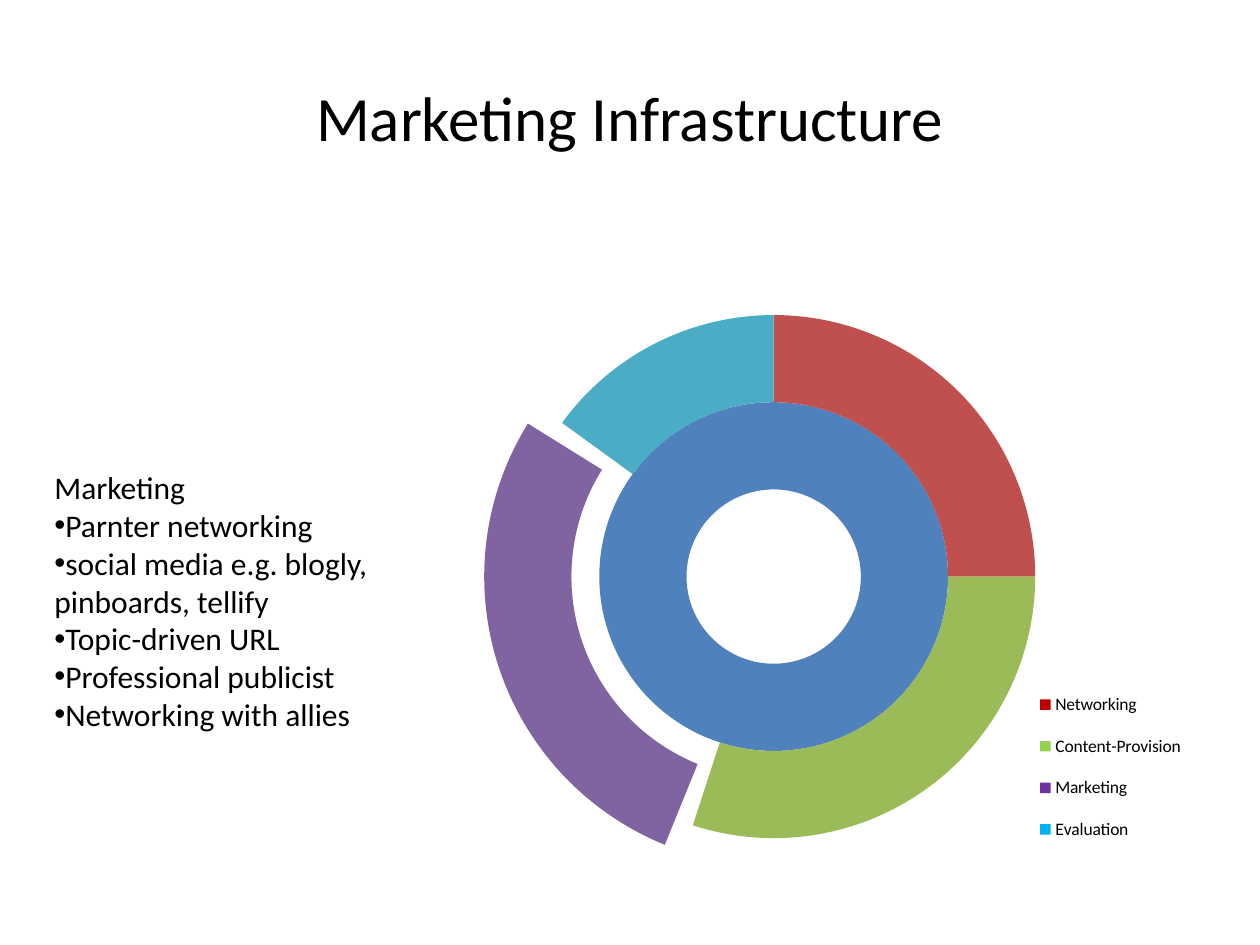
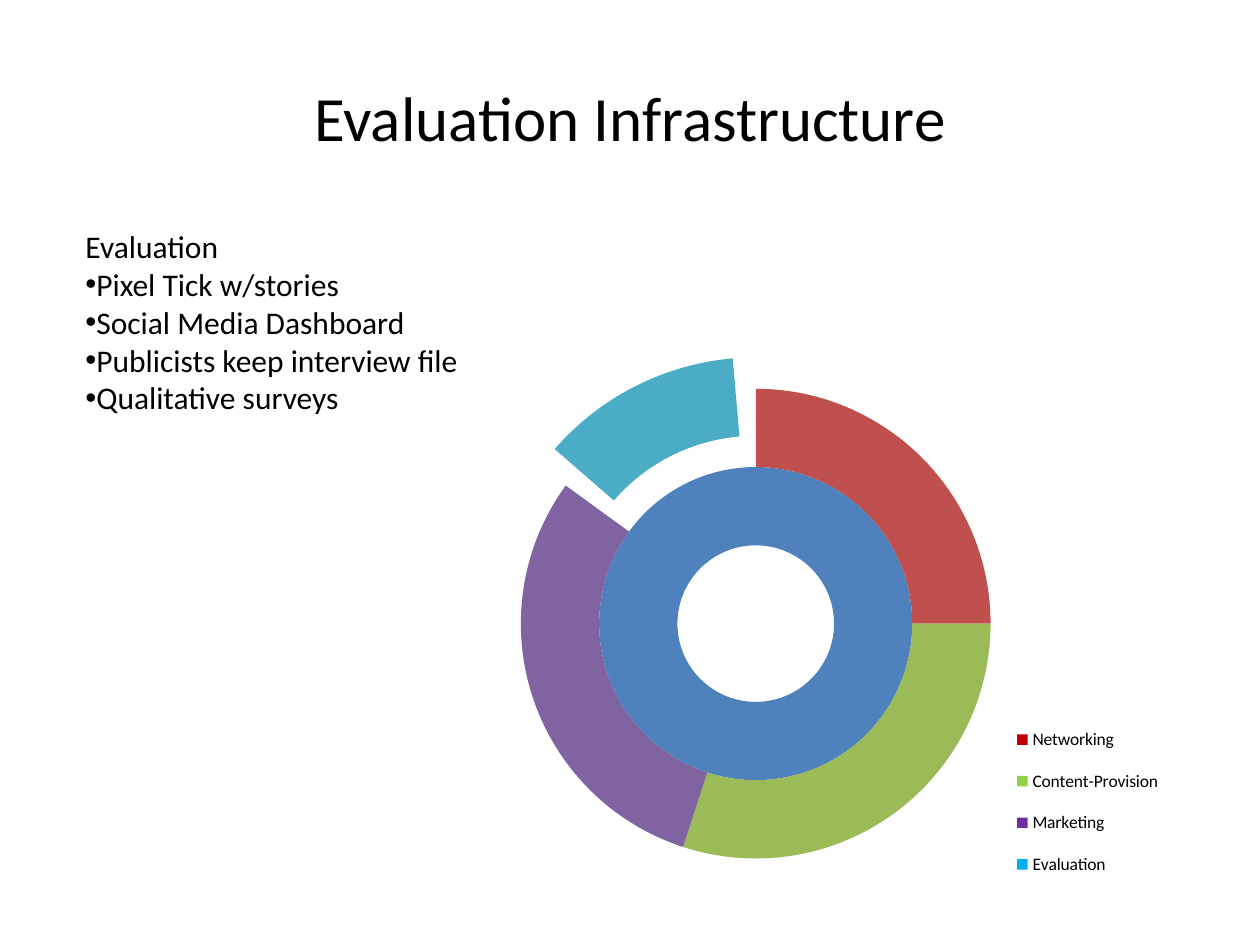
"""Build two infrastructure slides, each a title, a bulleted list and a two-ring doughnut chart."""
import dataclasses
import typing

import lxml.etree
import pptx
import pptx.chart.data
import pptx.dml.color
import pptx.enum.chart
import pptx.enum.text
import pptx.oxml.ns
import pptx.util

EMU_PER_PX = 914400 / 126


@dataclasses.dataclass(frozen=True)
class Theme:
    font: str = "Calibri"
    text: str = "000000"
    background: str = "FFFFFF"
    title_size: int = 36
    body_size: int = 18
    legend_size: int = 10
    inner_ring: tuple[str, ...] = ("4F81BD", "C00000", "92D050", "7030A0", "00B0F0")
    outer_ring: tuple[str, ...] = ("4F81BD", "C0504D", "9BBB59", "8064A2", "4BACC6")


class Box(typing.NamedTuple):
    left: int
    top: int
    width: int
    height: int

    def emu(self) -> list[int]:
        return [px(v) for v in self]


class InfrastructureSlide(typing.NamedTuple):
    title: str
    heading: str
    bullets: tuple[str, ...]
    list_box: Box
    chart_box: Box
    plot_box: Box
    legend_box: Box
    pulled_point: int
    explosion: int


THEME = Theme()
TITLE_BOX = Box(63, 38, 1134, 157)
CATEGORIES = ("", "Networking", "Content-Provision", "Marketing", "Evaluation")
RINGS = (
    ("Series 1", (100, 0, 0, 0, 0), THEME.inner_ring),
    ("Series 2", (None, 25, 30, 30, 15), THEME.outer_ring),
)
SLIDES = (
    InfrastructureSlide(
        title="Marketing Infrastructure",
        heading="Marketing",
        bullets=(
            "Parnter networking",
            "social media e.g. blogly, pinboards, tellify",
            "Topic-driven URL",
            "Professional publicist",
            "Networking with allies",
        ),
        list_box=Box(42, 462, 347, 280),
        chart_box=Box(357, 305, 861, 562),
        plot_box=Box(501, 315, 546, 523),
        legend_box=Box(1033, 673, 155, 188),
        pulled_point=3,
        explosion=32,
    ),
    InfrastructureSlide(
        title="Evaluation Infrastructure",
        heading="Evaluation",
        bullets=(
            "Pixel Tick w/stories",
            "Social Media Dashboard",
            "Publicists keep interview file",
            "Qualitative surveys",
        ),
        list_box=Box(73, 221, 451, 204),
        chart_box=Box(504, 336, 667, 562),
        plot_box=Box(521, 389, 470, 470),
        legend_box=Box(1010, 708, 155, 188),
        pulled_point=4,
        explosion=40,
    ),
)


def px(value: int) -> int:
    return round(value * EMU_PER_PX)


def rgb(value: str) -> pptx.dml.color.RGBColor:
    return pptx.dml.color.RGBColor.from_string(value)


def set_font(font, size: int) -> None:
    font.name = THEME.font
    font.size = pptx.util.Pt(size)
    font.color.rgb = rgb(THEME.text)


def add_text(slide, box: Box, lines: typing.Sequence[str], *, size: int,
             align=pptx.enum.text.PP_ALIGN.LEFT, anchor=pptx.enum.text.MSO_ANCHOR.TOP,
             autofit=pptx.enum.text.MSO_AUTO_SIZE.NONE, bullets_from: int | None = None) -> None:
    tf = slide.shapes.add_textbox(*box.emu()).text_frame
    tf.word_wrap = True
    tf.auto_size = autofit
    tf.vertical_anchor = anchor
    for i, line in enumerate(lines):
        p = tf.paragraphs[0] if i == 0 else tf.add_paragraph()
        p.alignment = align
        r = p.add_run()
        r.text = line
        set_font(r.font, size)
        if bullets_from is not None and i >= bullets_from:
            pPr = p._p.get_or_add_pPr()
            add_element(pPr, "a:buFont", typeface="Arial")
            add_element(pPr, "a:buChar", char="•")


def add_element(parent, tag: str, **attributes: str):
    return lxml.etree.SubElement(parent, pptx.oxml.ns.qn(tag), attributes)


def manual_layout(parent, box: Box, chart_box: Box, inner: bool = False):
    """Give a chart part a fixed place inside its chart and return the layout element."""
    for old in parent.xpath("c:layout"):
        parent.remove(old)
    layout = add_element(parent, "c:layout")
    manual = add_element(layout, "c:manualLayout")
    if inner:
        add_element(manual, "c:layoutTarget", val="inner")
    for mode in ("xMode", "yMode"):
        add_element(manual, f"c:{mode}", val="edge")
    fractions = {
        "x": (box.left - chart_box.left) / chart_box.width,
        "y": (box.top - chart_box.top) / chart_box.height,
        "w": box.width / chart_box.width,
        "h": box.height / chart_box.height,
    }
    for name, value in fractions.items():
        add_element(manual, f"c:{name}", val=f"{value:.3f}")
    return layout


def add_legend(chart, item: InfrastructureSlide) -> None:
    chart.has_legend = True
    chart.legend.position = pptx.enum.chart.XL_LEGEND_POSITION.RIGHT
    chart.legend.include_in_layout = False
    set_font(chart.legend.font, THEME.legend_size)
    legend = chart.legend._element
    layout = manual_layout(legend, item.legend_box, item.chart_box)
    entry = add_element(legend, "c:legendEntry")
    add_element(entry, "c:idx", val="0")
    add_element(entry, "c:delete", val="1")
    position = legend.xpath("c:legendPos")[0]
    position.addnext(layout)
    position.addnext(entry)


def add_doughnut(slide, item: InfrastructureSlide) -> None:
    data = pptx.chart.data.CategoryChartData()
    data.categories = CATEGORIES
    for name, values, _ in RINGS:
        data.add_series(name, values)
    chart = slide.shapes.add_chart(
        pptx.enum.chart.XL_CHART_TYPE.DOUGHNUT, *item.chart_box.emu(), data).chart
    chart.has_title = False
    set_font(chart.font, THEME.legend_size)
    plot = chart.plots[0]
    plot.vary_by_categories = True
    for series, (_, _, colors) in zip(plot.series, RINGS):
        for i, color in enumerate(colors):
            fmt = series.points[i].format
            fmt.fill.solid()
            fmt.fill.fore_color.rgb = rgb(color)
            fmt.line.fill.background()
    outer = plot.series[len(RINGS) - 1]._element
    point = outer.xpath(f"c:dPt[c:idx/@val='{item.pulled_point}']")[0]
    explosion = add_element(point, "c:explosion", val=str(item.explosion))
    point.xpath("c:spPr")[0].addprevious(explosion)
    area = chart._chartSpace.xpath("c:chart/c:plotArea")[0]
    area.insert(0, manual_layout(area, item.plot_box, item.chart_box, inner=True))
    add_legend(chart, item)


def build_slide(prs, item: InfrastructureSlide) -> None:
    slide = prs.slides.add_slide(prs.slide_layouts[6])
    slide.background.fill.solid()
    slide.background.fill.fore_color.rgb = rgb(THEME.background)
    add_text(slide, TITLE_BOX, [item.title], size=THEME.title_size,
             align=pptx.enum.text.PP_ALIGN.CENTER, anchor=pptx.enum.text.MSO_ANCHOR.MIDDLE)
    add_doughnut(slide, item)
    add_text(slide, item.list_box, [item.heading, *item.bullets], size=THEME.body_size,
             autofit=pptx.enum.text.MSO_AUTO_SIZE.SHAPE_TO_FIT_TEXT, bullets_from=1)


def main() -> None:
    prs = pptx.Presentation()
    prs.slide_width, prs.slide_height = px(1260), px(945)
    for item in SLIDES:
        build_slide(prs, item)
    prs.save("out.pptx")


if __name__ == "__main__":
    main()
